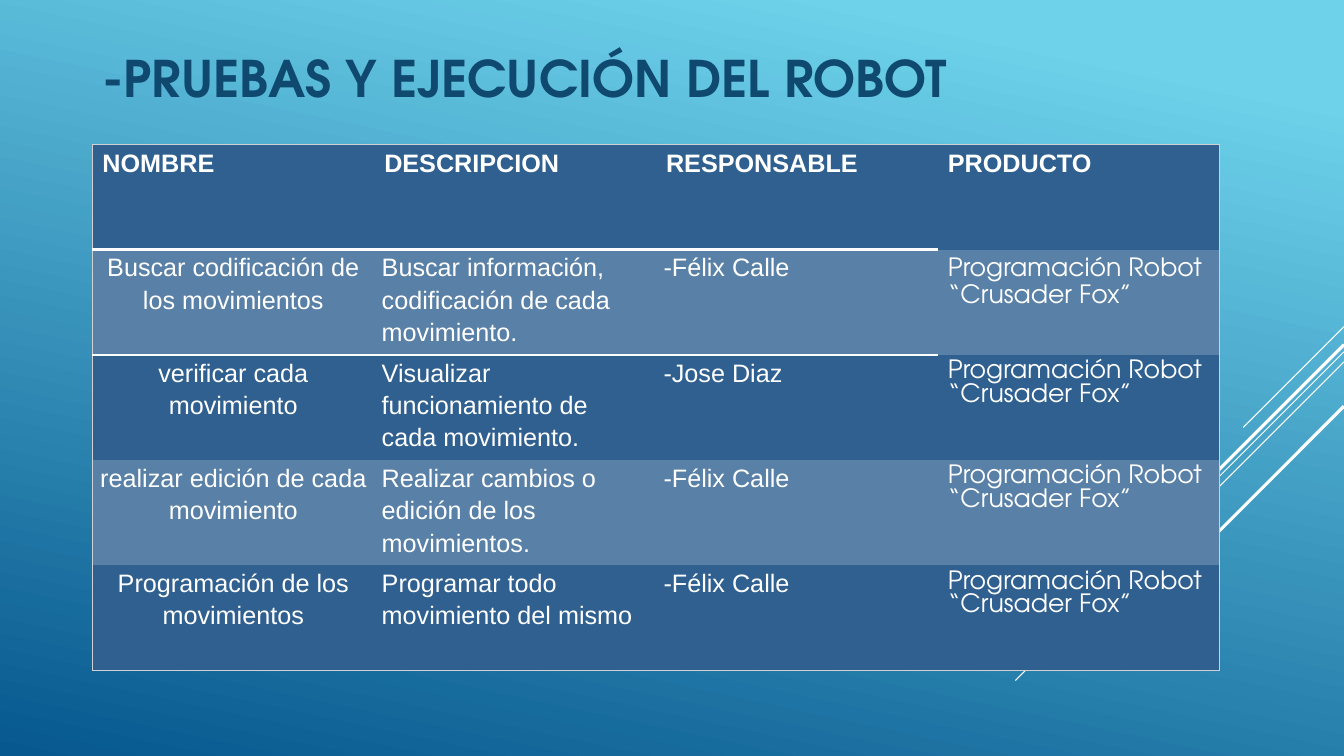
from dataclasses import dataclass

from lxml import etree
from pptx import Presentation
from pptx import util as u
from pptx.dml.color import RGBColor
from pptx.enum import shapes, text
from pptx.oxml import ns

Pt = u.Pt


@dataclass(frozen=True)
class Theme:
    sky: str = "6ED2EB"
    deep: str = "06588E"
    heading: str = "0F496F"
    white: str = "FFFFFF"
    frame: str = "CFD1D5"
    row_dark: str = "2F6090"
    row_light: str = "5980A6"
    body_font: str = "Arial"
    display_font: str = "TeX Gyre Adventor"
    heading_size: int = 36
    body_size: int = 18
    thin: float = 0.75
    thick: float = 2.25


THEME = Theme()
WIDTH, HEIGHT = 960, 540
NO_STYLE = "{2D5ABB26-0587-4C30-8999-92F81FD0307C}"
PRODUCT = "Programación Robot\n“Crusader Fox”"
HEADERS = ["NOMBRE", "DESCRIPCION", "RESPONSABLE", "PRODUCTO"]
TASKS = [
    ["Buscar codificación de los movimientos",
     "Buscar información, codificación de cada movimiento.", "-Félix Calle"],
    ["verificar cada movimiento",
     "Visualizar funcionamiento de cada movimiento.", "-Jose Diaz"],
    ["realizar edición de cada movimiento",
     "Realizar cambios o edición de los movimientos.", "-Félix Calle"],
    ["Programación de los movimientos",
     "Programar todo movimiento del mismo", "-Félix Calle"],
]
# Start height at the right edge, horizontal run, line width
RAYS = [
    (233.3, 72, THEME.thin),
    (251.3, 234.7, THEME.thin),
    (258.5, 149, THEME.thin),
    (246.2, 137.5, THEME.thick),
    (290.2, 100.1, THEME.thick),
]


def rgb(color):
    return RGBColor.from_string(color)


def style_runs(paragraph, font, size, color, bold=False):
    for run in paragraph.runs:
        run.font.name = font
        run.font.size = Pt(size)
        run.font.bold = bold
        run.font.color.rgb = rgb(color)


def set_insets(target, side, top):
    target.margin_left = target.margin_right = Pt(side)
    target.margin_top = target.margin_bottom = Pt(top)


def paint_background(slide):
    fill = slide.background.fill
    fill.gradient()
    fill.gradient_angle = 258
    stops = zip(fill.gradient_stops, (THEME.sky, THEME.deep), (0.1, 1))
    for stop, color, position in stops:
        stop.color.rgb = rgb(color)
        stop.position = position


def draw_rays(slide, right):
    """Draw 45-degree rays running down and left from the right edge."""
    for top, run, width in RAYS:
        ray = slide.shapes.add_connector(
            shapes.MSO_CONNECTOR.STRAIGHT,
            Pt(right), Pt(top), Pt(right - run), Pt(top + run))
        ray.line.color.rgb = rgb(THEME.white)
        ray.line.width = Pt(width)
        etree.SubElement(ray._element.spPr, ns.qn("a:effectLst"))


def add_heading(slide, left, top, width, height):
    frame = slide.shapes.add_textbox(
        Pt(left), Pt(top), Pt(width), Pt(height)).text_frame
    frame.word_wrap = True
    frame.vertical_anchor = text.MSO_ANCHOR.MIDDLE
    set_insets(frame, 7.2, 3.6)
    frame.text = "-PRUEBAS Y EJECUCIÓN DEL ROBOT"
    heading = frame.paragraphs[0]
    heading.line_spacing = 0.9
    style_runs(heading, THEME.display_font, THEME.heading_size,
               THEME.heading, bold=True)


def add_border(cell, edge, color, width, opacity=100):
    border = etree.SubElement(cell._tc.get_or_add_tcPr(), ns.qn(f"a:ln{edge}"),
                              w=str(int(Pt(width))))
    solid = etree.SubElement(border, ns.qn("a:solidFill"))
    tone = etree.SubElement(solid, ns.qn("a:srgbClr"), val=color)
    etree.SubElement(tone, ns.qn("a:alpha"), val=str(opacity * 1000))


def format_cell(cell, row, col, last_row, last_col):
    header, product = row == 0, col == last_col

    # Outer frame, and the rule under the headers
    outer = {"L": col == 0, "R": product, "T": header, "B": row == last_row}
    for edge, on_frame in outer.items():
        if on_frame:
            add_border(cell, edge, THEME.frame, THEME.thin, 60)
    if header and not product:
        add_border(cell, "B", THEME.white, THEME.thick)
    if row == 1 and not product:
        add_border(cell, "T", THEME.white, THEME.thick)

    # Banded fill
    cell.fill.solid()
    cell.fill.fore_color.rgb = rgb(
        THEME.row_light if row % 2 else THEME.row_dark)

    # Text
    set_insets(cell, *((7.2, 3.6) if header or product else (5.4, 0)))
    paragraph = cell.text_frame.paragraphs[0]
    if not header and (not product or row == 1):
        paragraph.line_spacing = 1.15
    if not header and col == 0:
        paragraph.alignment = text.PP_ALIGN.CENTER
    font = THEME.display_font if product and not header else THEME.body_font
    style_runs(paragraph, font, THEME.body_size, THEME.white, bold=header)


def add_task_table(slide, left, top, width, height):
    rows = [HEADERS] + [task + [PRODUCT] for task in TASKS]
    table = slide.shapes.add_table(
        len(rows), len(HEADERS),
        Pt(left), Pt(top), Pt(width), Pt(height)).table
    table.horz_banding = False
    table._tbl.tblPr.find(ns.qn("a:tableStyleId")).text = NO_STYLE
    for column in table.columns:
        column.width = Pt(width / len(HEADERS))
    for row, values in enumerate(rows):
        table.rows[row].height = Pt(height / len(rows))
        for col, value in enumerate(values):
            cell = table.cell(row, col)
            cell.text_frame.paragraphs[0].text = value
            format_cell(cell, row, col, len(rows) - 1, len(HEADERS) - 1)


def main():
    deck = Presentation()
    deck.slide_width, deck.slide_height = Pt(WIDTH), Pt(HEIGHT)
    slide = deck.slides.add_slide(deck.slide_layouts[6])
    paint_background(slide)
    draw_rays(slide, WIDTH)
    add_heading(slide, 66, 0, 780, 116.6)
    add_task_table(slide, 66, 103.2, 805.2, 376)
    deck.save("out.pptx")


if __name__ == "__main__":
    main()
